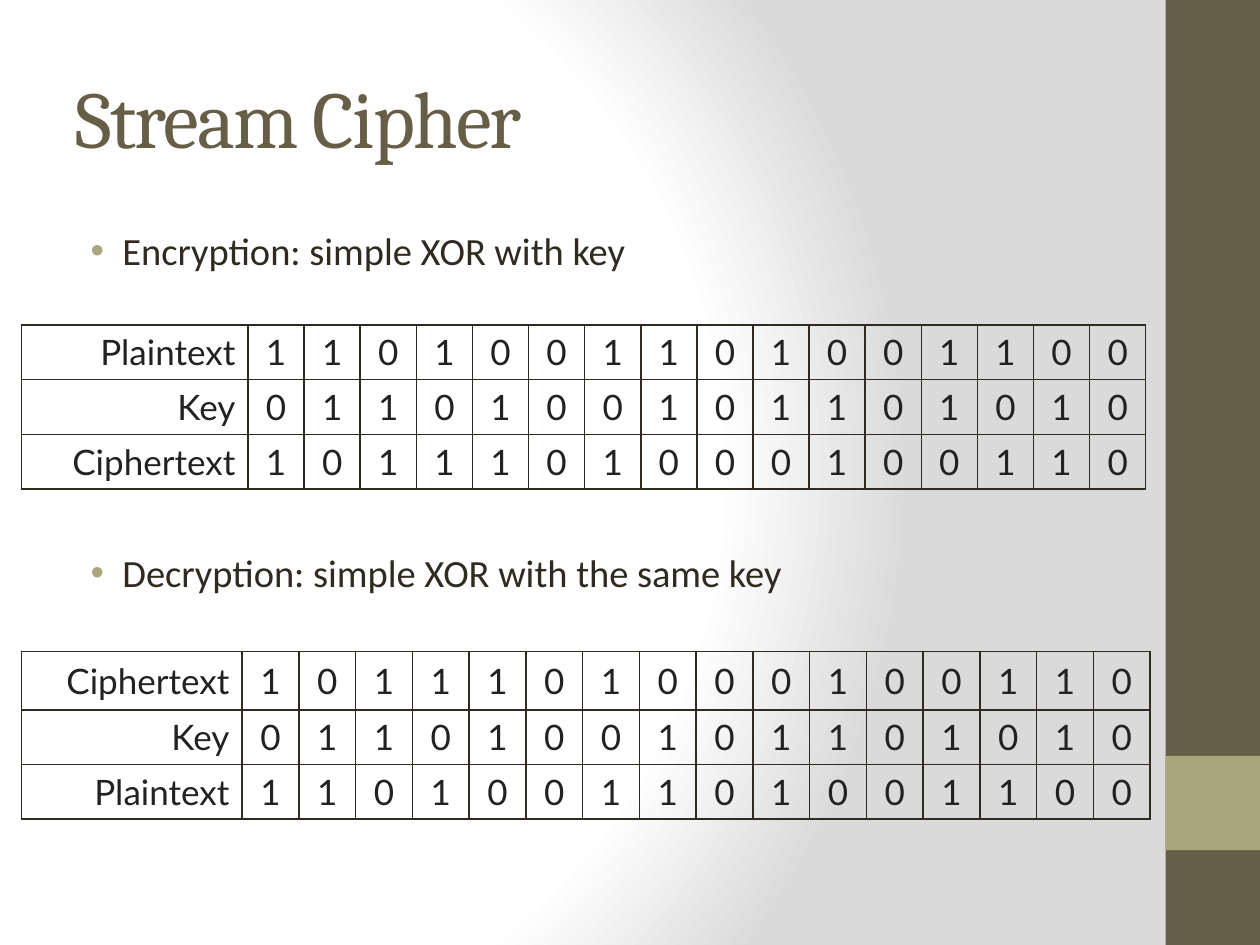
from lxml import etree
from pptx import Presentation
from pptx.dml.color import RGBColor
from pptx.enum.shapes import MSO_SHAPE
from pptx.enum.text import MSO_ANCHOR, PP_ALIGN
from pptx.oxml import parse_xml
from pptx.oxml.ns import nsdecls, qn
from pptx.util import Cm, Pt

RECTANGLE = MSO_SHAPE.RECTANGLE
MIDDLE, TOP = MSO_ANCHOR.MIDDLE, MSO_ANCHOR.TOP
LEFT, CENTER, RIGHT = PP_ALIGN.LEFT, PP_ALIGN.CENTER, PP_ALIGN.RIGHT

BROWN, OLIVE, INK, CELL_INK = "675E47", "A9A57C", "2F2B20", "222222"
PLAIN_BITS = "1101001101001100"
KEY_BITS = "0110100101101010"


def rgb(color):
    """Turn a hex string into a colour."""
    return RGBColor.from_string(color)


def xor(left_bits, right_bits):
    """Combine two bit strings by exclusive or."""
    return "".join(str(int(a != b)) for a, b in zip(left_bits, right_bits))


def write(paragraph, words, size, font, color, align=LEFT):
    """Add one styled run to a paragraph."""
    paragraph.alignment = align
    run = paragraph.add_run()
    run.text = words
    run.font.size = Pt(size)
    run.font.name = font
    run.font.color.rgb = rgb(color)
    return run


def set_indent(paragraph, margin, hanging):
    """Give a paragraph a left margin and a hanging first line."""
    properties = paragraph._p.get_or_add_pPr()
    properties.set("marL", str(Cm(margin)))
    properties.set("indent", str(-Cm(hanging)))
    return properties


def add_text_frame(slide, box, anchor):
    """Place a wrapping text box and return its frame."""
    frame = slide.shapes.add_textbox(*map(Cm, box)).text_frame
    frame.word_wrap = True
    frame.vertical_anchor = anchor
    return frame


def add_background(slide):
    """Fill the slide with a circular white to grey gradient."""
    stops = "".join(
        f'<a:gs pos="{position * 1000}"><a:srgbClr val="{color}"/></a:gs>'
        for position, color in ((0, "FFFFFF"), (75, "FFFFFF"), (100, "DADADA"))
    )
    background = parse_xml(
        f'<p:bg {nsdecls("p", "a")}><p:bgPr><a:gradFill rotWithShape="1">'
        f'<a:gsLst>{stops}</a:gsLst><a:path path="circle">'
        '<a:fillToRect l="20000" t="50000" r="100000" b="50000"/></a:path>'
        '</a:gradFill><a:effectLst/></p:bgPr></p:bg>'
    )
    slide.element.cSld.insert(0, background)


def add_sidebar(slide, box):
    """Draw the brown band with its olive square."""
    left, top, width, height = box
    square_top = top + height * 0.8
    for color, part in (
        (BROWN, box),
        (OLIVE, (left, square_top, width, width)),
    ):
        band = slide.shapes.add_shape(RECTANGLE, *map(Cm, part))
        band.shadow.inherit = False
        band.fill.solid()
        band.fill.fore_color.rgb = rgb(color)
        band.line.fill.background()


def add_title(slide, box, words):
    """Write the slide title."""
    frame = add_text_frame(slide, box, MIDDLE)
    run = write(frame.paragraphs[0], words, 46, "Cambria", BROWN)
    run.font._element.set("spc", "-100")


def add_bullets(slide, box, points, gap):
    """Write bullet points with a gap in points between them."""
    frame = add_text_frame(slide, box, TOP)
    for index, words in enumerate(points):
        paragraph = frame.add_paragraph() if index else frame.paragraphs[0]
        paragraph.space_before = Pt(gap if index else 0)
        properties = set_indent(paragraph, 0.95, 0.64)
        bullet_color = etree.SubElement(properties, qn("a:buClr"))
        etree.SubElement(bullet_color, qn("a:srgbClr"), val=OLIVE)
        etree.SubElement(properties, qn("a:buFont"), typeface="Arial")
        etree.SubElement(properties, qn("a:buChar"), char="•")
        write(paragraph, words, 22, "Calibri", INK)


def style_cell(cell):
    """Give a cell thin dark borders and no fill."""
    properties = cell._tc.get_or_add_tcPr()
    for side in ("lnL", "lnR", "lnT", "lnB"):
        border = etree.SubElement(properties, qn(f"a:{side}"), w=str(Pt(1)))
        fill = etree.SubElement(border, qn("a:solidFill"))
        etree.SubElement(fill, qn("a:srgbClr"), val=INK)
    cell.fill.background()
    cell.vertical_anchor = MIDDLE


def add_bit_table(slide, box, label_width, row_heights, bit_rows):
    """Lay out labelled bit strings with one bit in each column."""
    left, top, width = box
    bit_count = len(bit_rows[0][1])
    table = slide.shapes.add_table(
        len(bit_rows), bit_count + 1,
        Cm(left), Cm(top), Cm(width), Cm(sum(row_heights)),
    ).table
    table.first_row = table.horz_banding = False
    bit_width = (width - label_width) / bit_count
    for index, column in enumerate(table.columns):
        column.width = Cm(bit_width if index else label_width)
    for row, height, (label, bits) in zip(table.rows, row_heights, bit_rows):
        row.height = Cm(height)
        for index, (cell, words) in enumerate(zip(row.cells, (label, *bits))):
            style_cell(cell)
            paragraph = cell.text_frame.paragraphs[0]
            set_indent(paragraph, 0.95, 0.95)
            write(paragraph, words, 20, "Lato", CELL_INK, CENTER if index else RIGHT)


def add_cipher_slide(presentation):
    """Build the stream cipher slide."""
    slide = presentation.slides.add_slide(presentation.slide_layouts[6])
    plaintext = ("Plaintext", PLAIN_BITS)
    key = ("Key", KEY_BITS)
    ciphertext = ("Ciphertext", xor(PLAIN_BITS, KEY_BITS))
    add_background(slide)
    add_sidebar(slide, (23.5, 0, 1.9, 19.05))
    add_title(slide, (1.27, 0.76, 21.16, 3.18), "Stream Cipher")
    add_bullets(
        slide, (1.27, 4.45, 21.16, 13.33),
        ("Encryption: simple XOR with key",
         "Decryption: simple XOR with the same key"),
        157.7,
    )
    add_bit_table(slide, (0.43, 6.55, 22.68), 4.57, (1.1, 1.1, 1.1),
                  (plaintext, key, ciphertext))
    add_bit_table(slide, (0.43, 13.13, 22.76), 4.45, (1.18, 1.1, 1.1),
                  (ciphertext, key, plaintext))


def main():
    """Create and save the presentation."""
    presentation = Presentation()
    presentation.slide_width = Cm(25.4)
    presentation.slide_height = Cm(19.05)
    add_cipher_slide(presentation)
    presentation.save("out.pptx")


if __name__ == "__main__":
    main()
